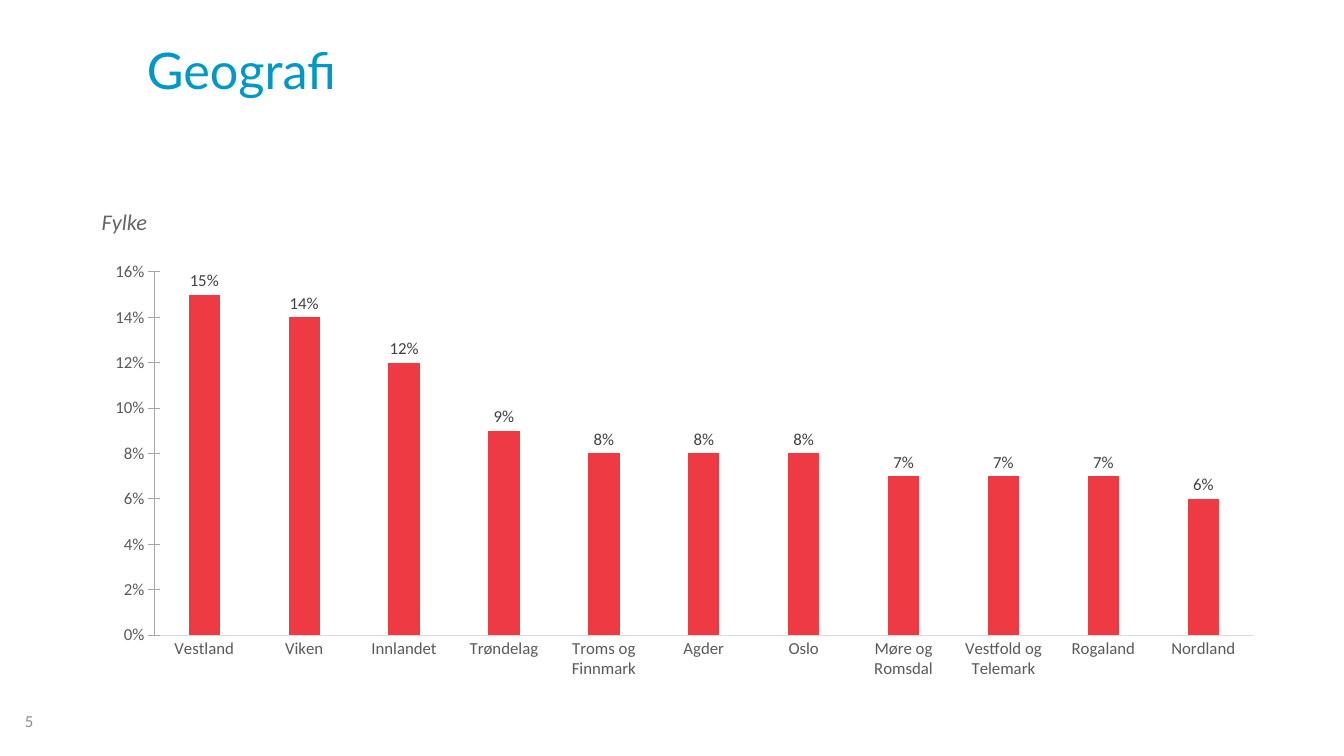
from typing import NamedTuple

from pptx import Presentation
from pptx.chart.data import CategoryChartData
from pptx.dml.color import RGBColor
from pptx.enum.chart import XL_CHART_TYPE as Kind, XL_LABEL_POSITION as Spot
from pptx.enum.chart import XL_TICK_MARK as Tick
from pptx.enum.text import MSO_ANCHOR as Anchor
from pptx.util import Cm, Pt

COLORS = {
    "title": "0098C6",
    "lead": "656567",
    "page": "8C8C8C",
    "bar": "EE3A43",
    "axis": "595959",
    "label": "404040",
    "base": "D9D9D9",
    "scale": "A6A6A6",
}

SHARES = {
    "Vestland": 0.15,
    "Viken": 0.14,
    "Innlandet": 0.12,
    "Trøndelag": 0.09,
    "Troms og Finnmark": 0.08,
    "Agder": 0.08,
    "Oslo": 0.08,
    "Møre og Romsdal": 0.07,
    "Vestfold og Telemark": 0.07,
    "Rogaland": 0.07,
    "Nordland": 0.06,
}


class Label(NamedTuple):
    text: str
    box: tuple[float, float, float, float]
    size: int
    color: str
    face: str = "Calibri"
    slant: bool = False
    anchor: Anchor = Anchor.MIDDLE


LABELS = [
    Label("Geografi", (3.45, 0.15, 28.7, 3.18), 36, "title", face="Lato"),
    Label("Fylke", (2.31, 4.27, 29.87, 1.78), 16, "lead", slant=True,
          anchor=Anchor.BOTTOM),
    Label("5", (0.38, 17.65, 7.9, 1.02), 12, "page"),
]


def paint(key: str) -> RGBColor:
    return RGBColor.from_string(COLORS[key])


def style(font, size: int, color: str, face: str = "Calibri") -> None:
    font.size = Pt(size)
    font.name = face
    font.color.rgb = paint(color)


def add_label(slide, label: Label) -> None:
    frame = slide.shapes.add_textbox(*map(Cm, label.box)).text_frame
    frame.word_wrap = True
    frame.vertical_anchor = label.anchor
    para = frame.paragraphs[0]
    para.text = label.text
    style(para.font, label.size, label.color, label.face)
    para.font.italic = label.slant


def style_axis(axis, line: str, tick: Tick) -> None:
    axis.has_major_gridlines = False
    axis.major_tick_mark = tick
    axis.minor_tick_mark = Tick.NONE
    axis.format.line.color.rgb = paint(line)
    axis.format.line.width = Pt(0.75)
    style(axis.tick_labels.font, 12, "axis")


def add_bars(slide) -> None:
    data = CategoryChartData(number_format="0%")
    data.categories = list(SHARES)
    data.add_series("Series 1", list(SHARES.values()))
    box = map(Cm, (2.31, 6.38, 29.87, 10.95))
    chart = slide.shapes.add_chart(Kind.COLUMN_CLUSTERED, *box, data).chart
    chart.has_title = False
    chart.has_legend = False
    chart.font.size = Pt(10)
    chart.font.name = "Calibri"

    # Axes
    style_axis(chart.category_axis, "base", Tick.NONE)
    scale = chart.value_axis
    style_axis(scale, "scale", Tick.CROSS)
    scale.minimum_scale = 0
    scale.maximum_scale = 0.16
    scale.major_unit = 0.02
    scale.tick_labels.number_format = "0%"
    scale.tick_labels.number_format_is_linked = False

    # Bars and their labels
    plot = chart.plots[0]
    plot.vary_by_categories = False
    plot.gap_width = 219
    plot.overlap = -27
    bars = plot.series[0]
    bars.format.fill.solid()
    bars.format.fill.fore_color.rgb = paint("bar")
    tags = bars.data_labels
    tags.show_value = True
    tags.position = Spot.OUTSIDE_END
    tags.number_format = "0%"
    tags.number_format_is_linked = False
    style(tags.font, 12, "label")


def main() -> None:
    deck = Presentation()
    deck.slide_width = Cm(33.87)
    deck.slide_height = Cm(19.05)
    slide = deck.slides.add_slide(deck.slide_layouts[6])
    for label in LABELS:
        add_label(slide, label)
    add_bars(slide)
    deck.save("out.pptx")


if __name__ == "__main__":
    main()
